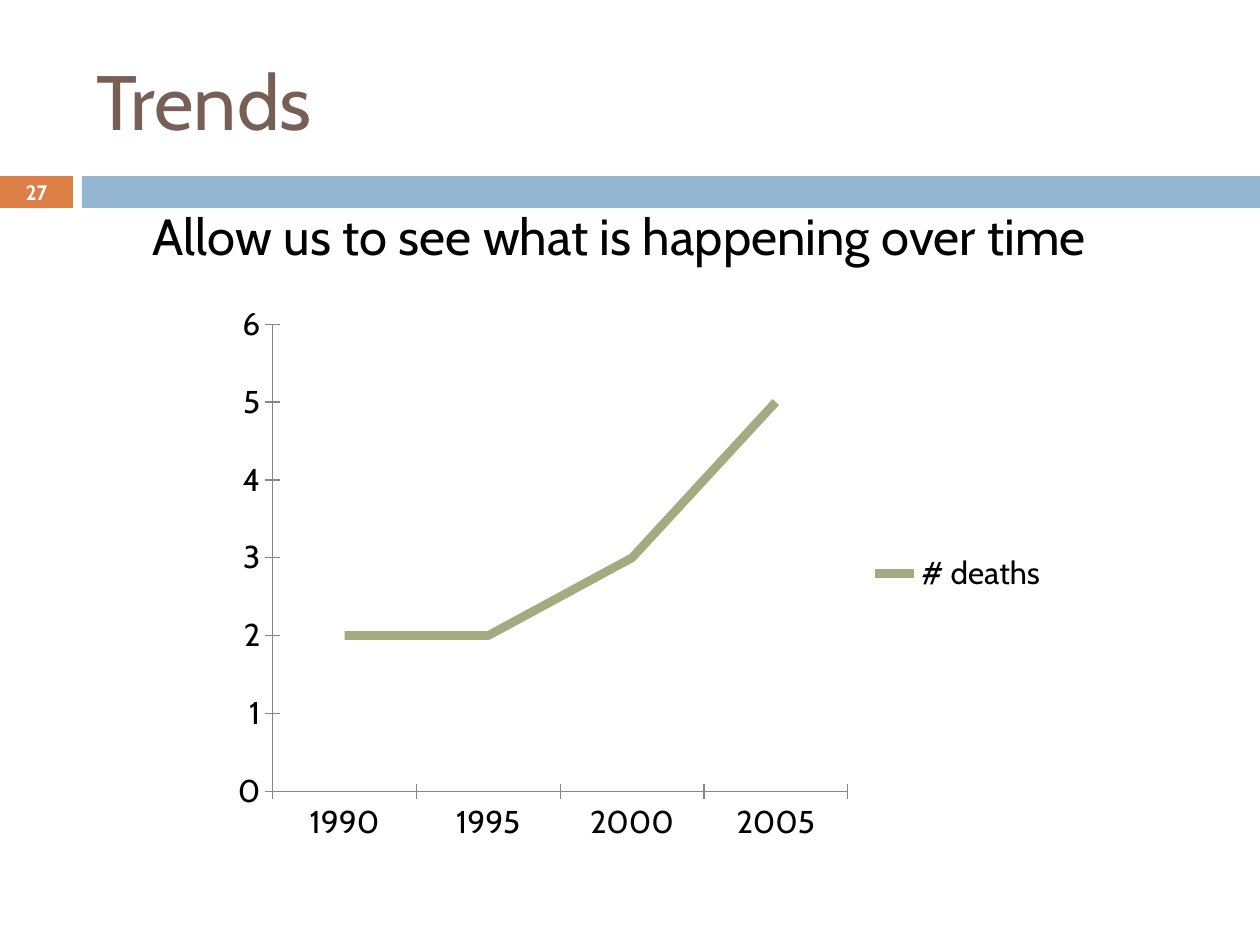
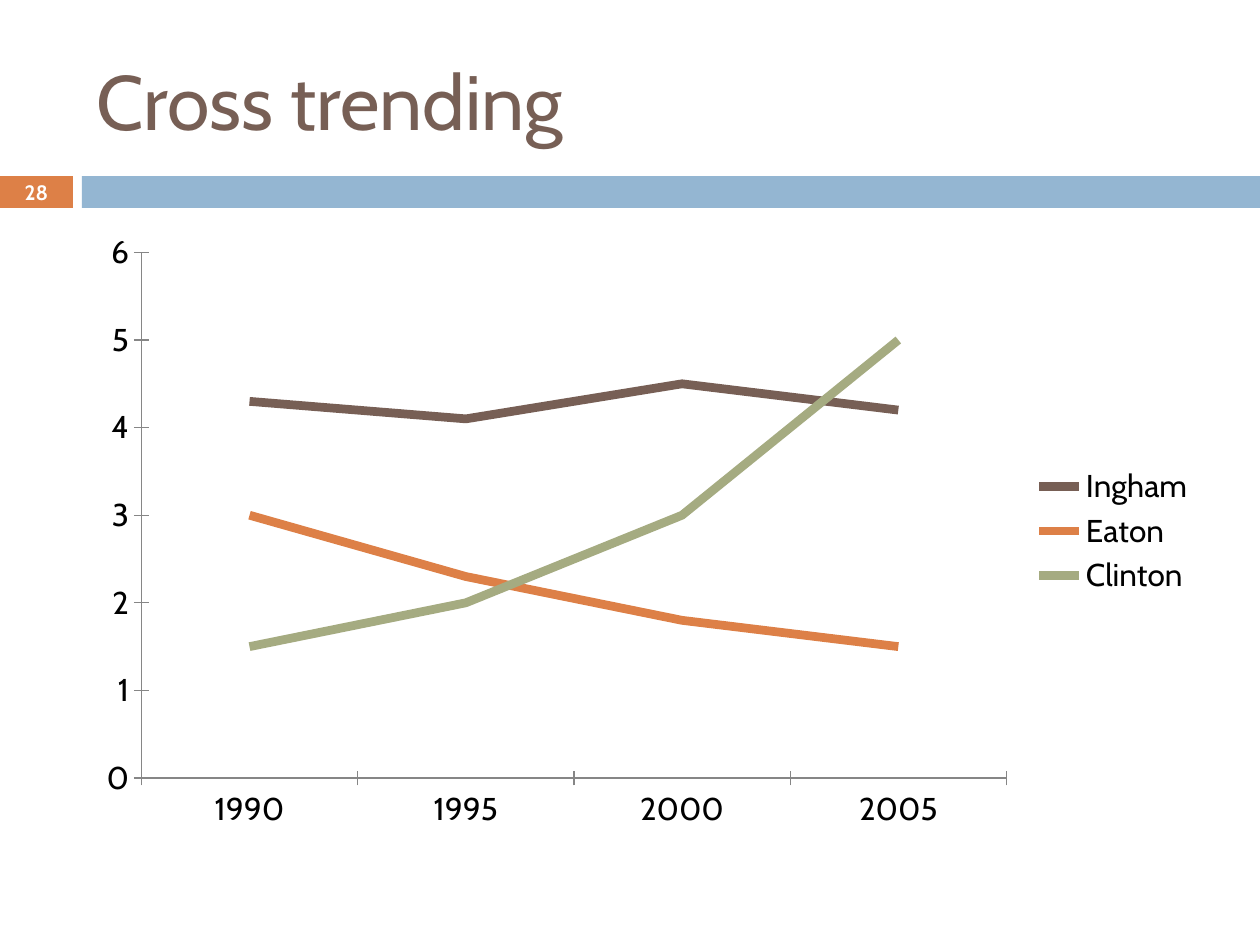
from dataclasses import dataclass

from pptx import Presentation
from pptx.chart.data import CategoryChartData
from pptx.dml.color import RGBColor
from pptx.enum.chart import XL_CHART_TYPE, XL_LEGEND_POSITION, XL_MARKER_STYLE, XL_TICK_MARK
from pptx.enum.shapes import MSO_SHAPE
from pptx.enum.text import MSO_ANCHOR, PP_ALIGN
from pptx.util import Emu, Pt

LINE_CHART = XL_CHART_TYPE.LINE
LEGEND_RIGHT = XL_LEGEND_POSITION.RIGHT
NO_MARKER = XL_MARKER_STYLE.NONE
TICK_CROSS = XL_TICK_MARK.CROSS
RECT = MSO_SHAPE.RECTANGLE
MIDDLE, TOP = MSO_ANCHOR.MIDDLE, MSO_ANCHOR.TOP
LEFT, CENTER = PP_ALIGN.LEFT, PP_ALIGN.CENTER
TITLE_ONLY = 5

PX_PER_INCH = 126
SLIDE_W, SLIDE_H = 1260, 945

# Boxes are left, top, width, height in px
TITLE_BOX = (84, 32, 1124, 136)
BAND_BOX = (0, 176, SLIDE_W, 32)
NUMBER_W, BAND_GAP = 73, 9
LEAD_BOX = (53, 199, 1134, 571)

YEARS = ("1990", "1995", "2000", "2005")


@dataclass(frozen=True)
class Theme:
    font: str = "Cabin"
    brown: str = "775F55"
    orange: str = "DD8047"
    green: str = "A5AB81"
    blue: str = "94B6D2"
    axis: str = "868686"
    black: str = "000000"
    white: str = "FFFFFF"
    title_size: float = 44
    lead_size: float = 29
    chart_size: float = 18
    number_size: float = 11.9
    series_line: float = 5
    thin_line: float = 0.75


THEME = Theme()


def px(n):
    return Emu(round(n * 914400 / PX_PER_INCH))


def emu_box(box):
    return [px(n) for n in box]


def rgb(color):
    return RGBColor.from_string(color)


def style_font(font, size, color, bold=False):
    font.name = THEME.font
    font.size = Pt(size)
    font.bold = bold
    font.color.rgb = rgb(color)


def style_line(line, color, width):
    line.color.rgb = rgb(color)
    line.width = Pt(width)


def write(shape, text, size, color, align=LEFT, anchor=MIDDLE, bold=False, before=0):
    tf = shape.text_frame
    tf.word_wrap = True
    tf.vertical_anchor = anchor
    p = tf.paragraphs[0]
    p.alignment = align
    p.space_before = Pt(before)
    r = p.add_run()
    r.text = text
    style_font(r.font, size, color, bold)


def add_block(s, box, color):
    sp = s.shapes.add_shape(RECT, *emu_box(box))
    sp.shadow.inherit = False
    sp.fill.solid()
    sp.fill.fore_color.rgb = rgb(color)
    sp.line.fill.background()


def add_band(s, box, number):
    """Number block at the left, then a gap and the long bar."""
    x, y, w, h = box
    bar_x = NUMBER_W + BAND_GAP
    number_box = (x, y, NUMBER_W, h)
    add_block(s, number_box, THEME.orange)
    add_block(s, (x + bar_x, y, w - bar_x, h), THEME.blue)
    tb = s.shapes.add_textbox(*emu_box(number_box))
    write(tb, str(number), THEME.number_size, THEME.white, CENTER, bold=True)


def add_title(s, box, text):
    title = s.shapes.title
    title.left, title.top, title.width, title.height = emu_box(box)
    write(title, text, THEME.title_size, THEME.brown)


def add_lead(s, box, text):
    tb = s.shapes.add_textbox(*emu_box(box))
    write(tb, text, THEME.lead_size, THEME.black, CENTER, TOP, before=7)


def add_trend_chart(s, box, series):
    """Draw one line for each (name, values, color) in series."""
    data = CategoryChartData()
    data.categories = YEARS
    for name, values, _ in series:
        data.add_series(name, values)
    chart = s.shapes.add_chart(LINE_CHART, *emu_box(box), data).chart
    style_font(chart.font, THEME.chart_size, THEME.black)
    chart.has_title = False
    chart.has_legend = True
    chart.legend.position = LEGEND_RIGHT
    chart.legend.include_in_layout = False

    for axis in (chart.category_axis, chart.value_axis):
        axis.major_tick_mark = TICK_CROSS
        style_line(axis.format.line, THEME.axis, THEME.thin_line)
    values_axis = chart.value_axis
    values_axis.minimum_scale, values_axis.maximum_scale = 0, 6
    values_axis.major_unit = 1
    style_line(values_axis.major_gridlines.format.line, THEME.white, THEME.thin_line)

    plot = chart.plots[0]
    plot.vary_by_categories = False
    for line, (_, _, color) in zip(plot.series, series):
        line.smooth = False
        line.marker.style = NO_MARKER
        style_line(line.format.line, color, THEME.series_line)


def add_trend_slide(prs, number, title, chart_box, series, lead=None):
    s = prs.slides.add_slide(prs.slide_layouts[TITLE_ONLY])
    add_band(s, BAND_BOX, number)
    add_title(s, TITLE_BOX, title)
    if lead:
        add_lead(s, LEAD_BOX, lead)
    add_trend_chart(s, chart_box, series)


def main():
    prs = Presentation()
    prs.slide_width, prs.slide_height = px(SLIDE_W), px(SLIDE_H)
    add_trend_slide(
        prs, 27, "Trends", (221, 294, 840, 559),
        [("# deaths", (2, 2, 3, 5), THEME.green)],
        lead="Allow us to see what is happening over time",
    )
    add_trend_slide(
        prs, 28, "Cross trending", (84, 221, 1124, 620),
        [
            ("Ingham", (4.3, 4.1, 4.5, 4.2), THEME.brown),
            ("Eaton", (3, 2.3, 1.8, 1.5), THEME.orange),
            ("Clinton", (1.5, 2, 3, 5), THEME.green),
        ],
    )
    prs.save("out.pptx")


if __name__ == "__main__":
    main()
